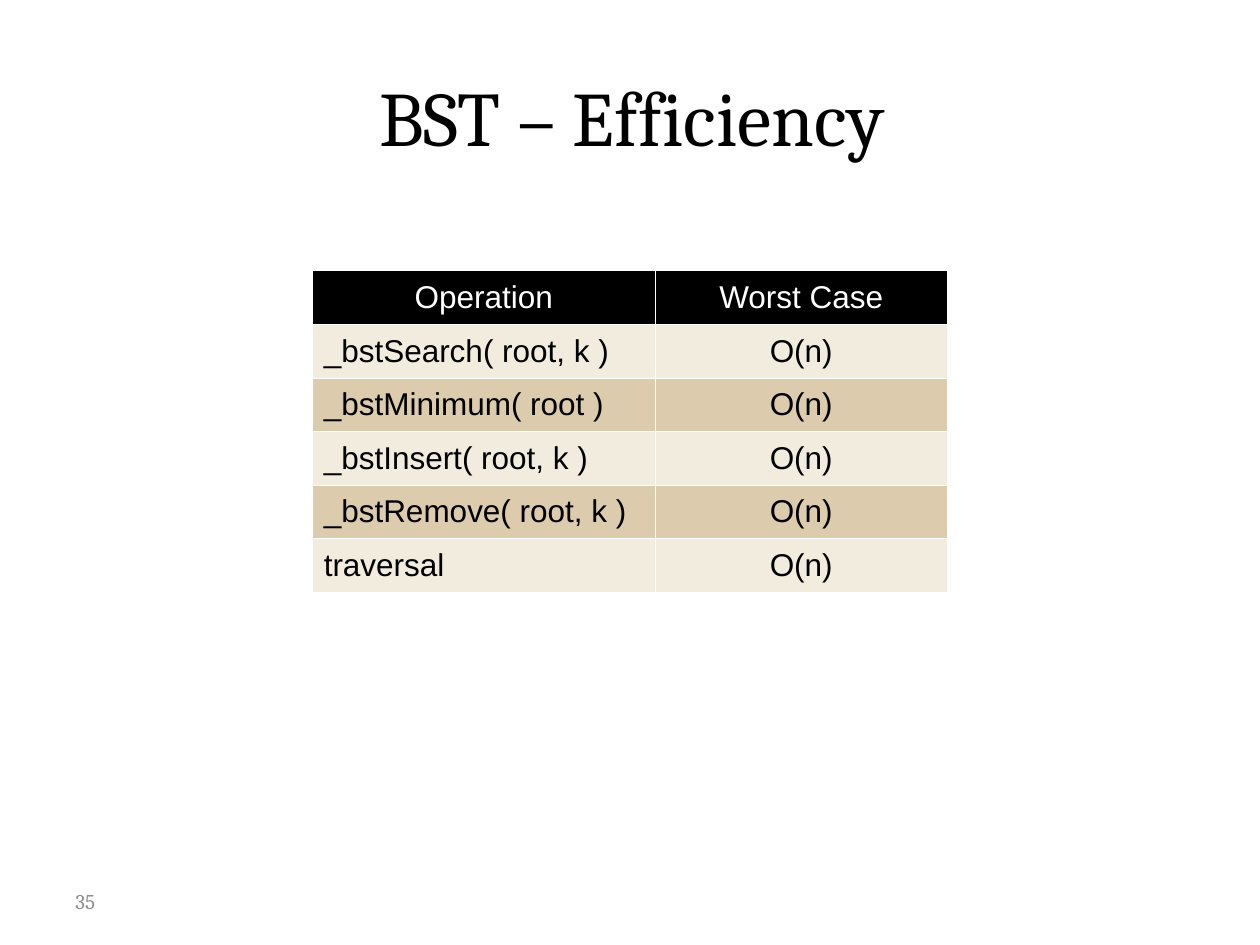
import dataclasses

import lxml.etree
import pptx
import pptx.dml.color
import pptx.enum.text
import pptx.oxml.ns
import pptx.util

Inches = pptx.util.Inches
Pt = pptx.util.Pt
RGBColor = pptx.dml.color.RGBColor
PP_ALIGN = pptx.enum.text.PP_ALIGN
MIDDLE = pptx.enum.text.MSO_ANCHOR.MIDDLE

BLACK = RGBColor(0x00, 0x00, 0x00)
WHITE = RGBColor(0xFF, 0xFF, 0xFF)
GREY = RGBColor(0x8C, 0x8C, 0x8C)
CREAM = RGBColor(0xF2, 0xEC, 0xDE)
TAN = RGBColor(0xDC, 0xCB, 0xAC)

COLUMN_WIDTHS = (2.72, 2.32)
ROW_HEIGHT = 0.425
BORDER_WIDTH = Pt(0.57)


@dataclasses.dataclass(frozen=True)
class Efficiency:
    operation: str
    worst_case: str = "O(n)"


HEADER = Efficiency("Operation", "Worst Case")
OPERATIONS = (
    Efficiency("_bstSearch( root, k )"),
    Efficiency("_bstMinimum( root )"),
    Efficiency("_bstInsert( root, k )"),
    Efficiency("_bstRemove( root, k )"),
    Efficiency("traversal"),
)


def format_text(paragraph, font: str, size: float, color: RGBColor, align: PP_ALIGN) -> None:
    paragraph.alignment = align
    for run in paragraph.runs:
        run.font.name = font
        run.font.size = Pt(size)
        run.font.color.rgb = color


def add_borders(cell, color: RGBColor) -> None:
    properties = cell._tc.get_or_add_tcPr()
    for side in ("a:lnL", "a:lnR", "a:lnT", "a:lnB"):
        line = lxml.etree.SubElement(properties, pptx.oxml.ns.qn(side), w=str(int(BORDER_WIDTH)))
        fill = lxml.etree.SubElement(line, pptx.oxml.ns.qn("a:solidFill"))
        lxml.etree.SubElement(fill, pptx.oxml.ns.qn("a:srgbClr"), val=str(color))


def fill_cell(cell, text: str, fill: RGBColor, color: RGBColor, align: PP_ALIGN) -> None:
    cell.text_frame.text = text
    cell.vertical_anchor = MIDDLE
    cell.margin_left = cell.margin_right = Inches(0.09)
    cell.margin_top, cell.margin_bottom = Inches(0.08), Inches(0.06)
    paragraph = cell.text_frame.paragraphs[0]
    paragraph.line_spacing = 0.93
    format_text(paragraph, "Arial", 18, color, align)
    add_borders(cell, WHITE)
    cell.fill.solid()
    cell.fill.fore_color.rgb = fill


def add_efficiency_table(slide) -> None:
    rows = (HEADER, *OPERATIONS)
    table = slide.shapes.add_table(
        len(rows), len(COLUMN_WIDTHS), Inches(2.48), Inches(2.15),
        Inches(sum(COLUMN_WIDTHS)), Inches(ROW_HEIGHT * len(rows)),
    ).table
    for column, width in zip(table.columns, COLUMN_WIDTHS):
        column.width = Inches(width)
    for index, row in enumerate(rows):
        table.rows[index].height = Inches(ROW_HEIGHT)
        is_header = index == 0
        band = BLACK if is_header else (TAN, CREAM)[index % 2]
        color = WHITE if is_header else BLACK
        operation_align = PP_ALIGN.CENTER if is_header else PP_ALIGN.LEFT
        fill_cell(table.cell(index, 0), row.operation, band, color, operation_align)
        fill_cell(table.cell(index, 1), row.worst_case, band, color, PP_ALIGN.CENTER)


def main() -> None:
    deck = pptx.Presentation()
    deck.slide_width, deck.slide_height = Inches(10), Inches(7.5)
    slide = deck.slides.add_slide(deck.slide_layouts[5])

    # Title
    title = slide.shapes.title
    title.left, title.top = Inches(0.5), Inches(0.3)
    title.width, title.height = Inches(9.03), Inches(1.25)
    title.text_frame.text = "BST – Efficiency"
    title.text_frame.vertical_anchor = MIDDLE
    title.text_frame.margin_top = Inches(0.03)
    format_text(title.text_frame.paragraphs[0], "Cambria", 44, BLACK, PP_ALIGN.CENTER)

    # Worst-case table
    add_efficiency_table(slide)

    # Page number
    page_number = slide.shapes.add_textbox(Inches(0.5), Inches(6.95), Inches(2.33), Inches(0.4))
    page_number.text_frame.word_wrap = True
    page_number.text_frame.vertical_anchor = MIDDLE
    page_number.text_frame.text = "35"
    format_text(page_number.text_frame.paragraphs[0], "Cambria", 12, GREY, PP_ALIGN.LEFT)

    deck.save("out.pptx")


if __name__ == "__main__":
    main()
